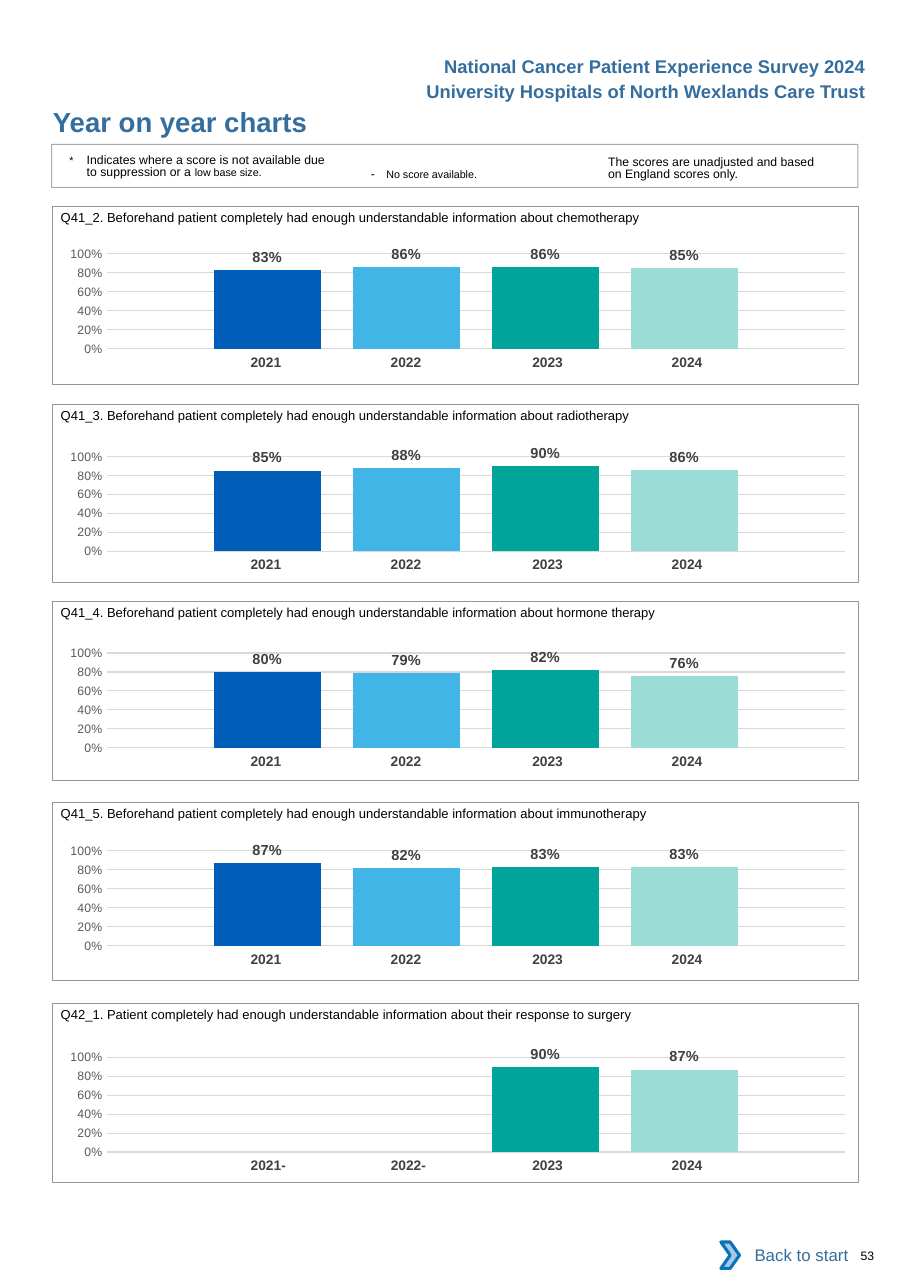
from dataclasses import dataclass

from lxml.etree import SubElement
from pptx import Presentation
from pptx.chart.data import CategoryChartData
from pptx.dml.color import RGBColor
from pptx.enum.chart import XL_CHART_TYPE, XL_LABEL_POSITION, XL_TICK_MARK
from pptx.enum.shapes import MSO_SHAPE
from pptx.enum.text import MSO_ANCHOR, PP_ALIGN
from pptx.oxml.ns import qn
from pptx.util import Cm, Pt


@dataclass(frozen=True)
class Theme:
    font: str = "Arial"
    chart_font: str = "Calibri"
    heading: str = "336E9F"
    ink: str = "000000"
    border: str = "939598"
    year: str = "414042"
    value: str = "404040"
    axis: str = "595959"
    grid: str = "D9D9D9"
    arrow_fill: str = "A8C7E9"
    arrow_line: str = "0A74BB"
    bars: tuple = ("005EB8", "41B6E6", "00A499", "9CDCD7")
    title_size: float = 18
    header_size: float = 12
    link_size: float = 11
    chart_size: float = 10
    value_size: float = 9.5
    year_size: float = 9
    question_size: float = 8.5
    note_size: float = 8
    small_size: float = 7


def rgb(value):
    return RGBColor.from_string(value)


def set_font(font, size, color, name, bold=False):
    font.name, font.size, font.bold = name, Pt(size), bold
    font.color.rgb = rgb(color)


class Page:
    def __init__(self, slide, theme):
        self.slide, self.theme = slide, theme

    def text(self, box, runs, size, color, bold=False, align=PP_ALIGN.LEFT,
             anchor=MSO_ANCHOR.TOP, hang=0, line=None):
        """Runs are plain strings or (string, size) pairs."""
        sp = self.slide.shapes.add_textbox(*map(Cm, box))
        tf = sp.text_frame
        tf.word_wrap, tf.vertical_anchor = True, anchor
        tf.margin_left = tf.margin_right = tf.margin_top = tf.margin_bottom = 0
        p = tf.paragraphs[0]
        p.alignment = align
        set_font(p.font, size, color, self.theme.font, bold)
        if line:
            p.line_spacing = Pt(line)
        if hang:
            pPr = p._p.get_or_add_pPr()
            pPr.set("marL", str(Cm(hang)))
            pPr.set("indent", str(-Cm(hang)))
        for run in runs:
            r = p.add_run()
            if isinstance(run, tuple):
                r.text, r.font.size = run[0], Pt(run[1])
            else:
                r.text = run

    def shape(self, kind, box, line, width=0.5, fill=None, alpha=None):
        sp = self.slide.shapes.add_shape(kind, *map(Cm, box))
        sp.shadow.inherit = False
        if fill:
            sp.fill.solid()
            sp.fill.fore_color.rgb = rgb(fill)
        else:
            sp.fill.background()
        sp.line.color.rgb = rgb(line)
        sp.line.width = Pt(width)
        if alpha:
            clr = sp.line._ln.find(".//" + qn("a:srgbClr"))
            SubElement(clr, qn("a:alpha"), val=str(alpha * 1000))

    def years(self, left, top, labels):
        widths, right_margins = (3.23, 3.23, 3.4, 3.23), (0, 0, 0.1, 0.3)
        table = self.slide.shapes.add_table(
            1, len(labels), Cm(left), Cm(top), Cm(sum(widths)), Cm(0.69)).table
        table.first_row = table.horz_banding = False
        # Built-in "No Style, No Grid"
        table._tbl.tblPr[0].text = "{2D5ABB26-0587-4C30-8999-92F81FD0307C}"
        for i, label in enumerate(labels):
            table.columns[i].width = Cm(widths[i])
            cell = table.cell(0, i)
            cell.fill.background()
            cell.margin_left = Cm(0.36 if label.endswith("-") else 0.25)
            cell.margin_right = Cm(right_margins[i])
            cell.text = label
            p = cell.text_frame.paragraphs[0]
            p.alignment = PP_ALIGN.CENTER
            set_font(p.font, self.theme.year_size, self.theme.year, self.theme.font, True)

    def chart(self, box, values):
        t = self.theme
        data = CategoryChartData(number_format="0%")
        data.categories = ["1"]
        for i, value in enumerate(values, 1):
            data.add_series(f"Series {i}", [value])
        chart = self.slide.shapes.add_chart(
            XL_CHART_TYPE.COLUMN_CLUSTERED, *map(Cm, box), data).chart
        chart.has_title = chart.has_legend = False
        set_font(chart.font, t.chart_size, t.ink, t.chart_font)
        chart.category_axis.visible = False

        # Percentage axis
        axis = chart.value_axis
        axis.minimum_scale, axis.maximum_scale, axis.major_unit = 0, 1, 0.2
        axis.major_tick_mark = axis.minor_tick_mark = XL_TICK_MARK.NONE
        axis.format.line.fill.background()
        axis.major_gridlines.format.line.color.rgb = rgb(t.grid)
        axis.major_gridlines.format.line.width = Pt(0.75)
        axis.tick_labels.number_format = "0%"
        axis.tick_labels.number_format_is_linked = False
        set_font(axis.tick_labels.font, t.note_size, t.axis, t.font)

        # Bars and their labels
        plot = chart.plots[0]
        plot.gap_width, plot.overlap, plot.vary_by_categories = 200, -30, False
        for series, color in zip(plot.series, t.bars):
            series.format.fill.solid()
            series.format.fill.fore_color.rgb = rgb(color)
            labels = series.data_labels
            labels.show_value = True
            labels.position = XL_LABEL_POSITION.OUTSIDE_END
            labels.number_format, labels.number_format_is_linked = "0%", False
            set_font(labels.font, t.value_size, t.value, t.font, True)

        # Fixed inner plot area
        area = chart._chartSpace.find(".//" + qn("c:plotArea"))
        layout = area.find(qn("c:layout"))
        if layout is None:
            layout = SubElement(area, qn("c:layout"))
            area.insert(0, layout)
        manual = SubElement(layout, qn("c:manualLayout"))
        for tag, val in (("layoutTarget", "inner"), ("xMode", "edge"), ("yMode", "edge"),
                         ("x", "0.08"), ("y", "0.145"), ("w", "0.915"), ("h", "0.666")):
            SubElement(manual, qn("c:" + tag), val=val)

    def panel(self, top, chart_top, question, values):
        t = self.theme
        self.shape(MSO_SHAPE.RECTANGLE, (1.21, top, 18.59, 4.11), t.border)
        self.years(4.39, chart_top + 2.67,
                   [f"{year}{'-' if value is None else ''}"
                    for year, value in zip(range(2021, 2025), values)])
        self.chart((0.98, chart_top, 18.59, 3.28), values)
        self.text((1.4, top + 0.07, 18.3, 0.4), [question], t.question_size, t.ink)


def main():
    prs = Presentation()
    prs.slide_width, prs.slide_height = Cm(20.98), Cm(29.69)
    t = Theme()
    page = Page(prs.slides.add_slide(prs.slide_layouts[6]), t)

    # Header and title
    for top, line in ((1.28, "National Cancer Patient Experience Survey 2024"),
                      (1.85, "University Hospitals of North Wexlands Care Trust")):
        page.text((7.96, top, 12, 0.5), [line], t.header_size, t.heading,
                  True, PP_ALIGN.RIGHT)
    page.text((1.22, 2.43, 11.4, 0.76), ["Year on year charts"],
              t.title_size, t.heading, True)

    # Key to the symbols
    page.shape(MSO_SHAPE.RECTANGLE, (1.19, 3.33, 18.59, 0.99),
               t.border, width=0.75, alpha=80)
    page.text((1.6, 3.56, 6, 0.6),
              [("*", t.small_size),
               "\tIndicates where a score is not available due to suppression or a ",
               ("low base size.", t.small_size)],
              t.note_size, t.ink, hang=0.4, line=8.1)
    page.text((8.55, 3.76, 4.2, 0.5), ["-", ("\tNo score available.", t.small_size)],
              t.note_size, t.ink, anchor=MSO_ANCHOR.MIDDLE, hang=0.36)
    page.text((14.02, 3.6, 4.95, 0.6),
              ["The scores are unadjusted and based on England scores only."],
              t.note_size, t.ink, line=8.1)

    # Question panels: top, chart top, question, scores for 2021 to 2024
    lead = "Beforehand patient completely had enough understandable information about"
    for panel in (
        (4.75, 5.38, f"Q41_2. {lead} chemotherapy", (0.83, 0.86, 0.86, 0.85)),
        (9.32, 10.05, f"Q41_3. {lead} radiotherapy", (0.85, 0.88, 0.9, 0.86)),
        (13.87, 14.58, f"Q41_4. {lead} hormone therapy", (0.8, 0.79, 0.82, 0.76)),
        (18.49, 19.14, f"Q41_5. {lead} immunotherapy", (0.87, 0.82, 0.83, 0.83)),
        (23.14, 23.9, "Q42_1. Patient completely had enough understandable information "
                      "about their response to surgery", (None, None, 0.9, 0.87)),
    ):
        page.panel(*panel)

    # Footer
    page.shape(MSO_SHAPE.CHEVRON, (16.62, 28.63, 0.43, 0.61),
               t.arrow_line, width=2, fill=t.arrow_fill)
    page.text((17.1, 28.4, 2.46, 1.07), ["Back to start"], t.link_size, t.heading,
              align=PP_ALIGN.RIGHT, anchor=MSO_ANCHOR.MIDDLE)
    page.text((19.84, 28.77, 1, 0.33), ["53"], t.note_size, t.ink)

    prs.save("out.pptx")


if __name__ == "__main__":
    main()
